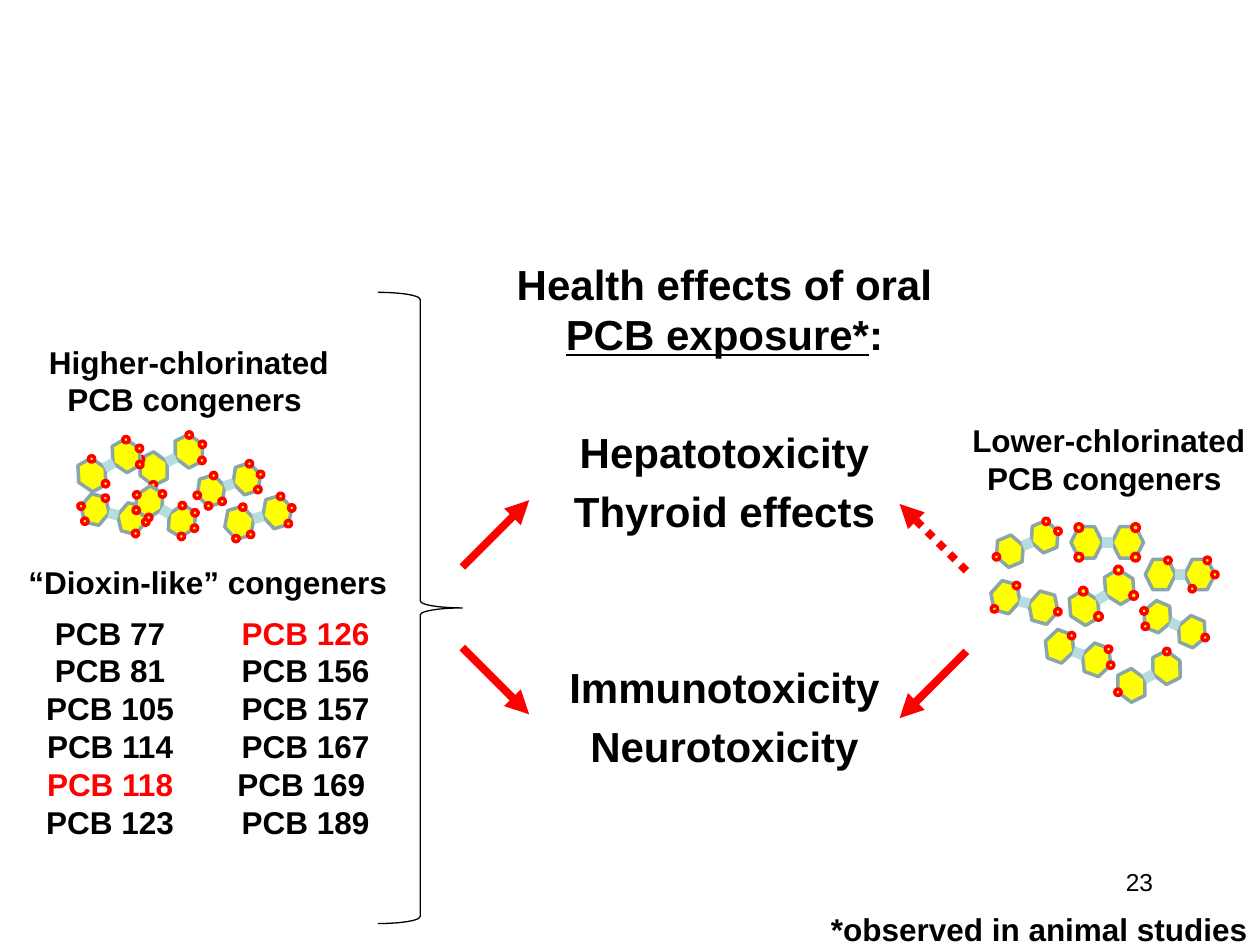
from math import cos, radians, sin

from lxml.etree import SubElement
from pptx import Presentation
from pptx.dml.color import RGBColor as Rgb
from pptx.enum.dml import MSO_LINE as Dash
from pptx.enum.shapes import MSO_CONNECTOR as Conn, MSO_SHAPE as Kind
from pptx.enum.text import MSO_ANCHOR as Anchor, MSO_AUTO_SIZE as Fit, PP_ALIGN as Align
from pptx.oxml.ns import qn
from pptx.util import Pt

PX = 9144
INK = {"black": "000000", "white": "FFFFFF", "red": "FF0000",
       "yellow": "FFFF00", "gray": "8AA6A8", "pale": "B6DCDF"}
CORNERS = [(0.5, 0), (0.25, 0.47), (-0.25, 0.47),
           (-0.5, 0), (-0.25, -0.47), (0.25, -0.47)]
LOWER = [
    (829, 501, 24, 20.1, "5", "50"),
    (909, 444, 24, 0, "5", "502"),
    (850, 418, 25, 0, "42", "51"),
    (848, 470, 25, -31, "51", "51"),
    (786, 462, 24, 15.5, "52", "0"),
    (907, 478, 23, 23.5, "32", "0"),
    (790, 426, 23, -22.6, "3", "50"),
    (886, 532, 24, -26.9, "3", "5"),
]
HIGHER = [
    (110, 360, 24, -26.6, "42", "501"),
    (61, 365, 24, -29.3, "51", "501"),
    (178, 403, 24, -15.9, "512", "501"),
    (64, 393, 23, 13.7, "532", "501"),
    (156, 378, 23, -18.3, "5123", "501"),
    (107, 387, 23, 30.1, "5123", "5014"),
]
DIOXIN = [77, 81, 105, 114, 118, 123, 126, 156, 157, 167, 169, 189]
EFFECTS = [("Hepatotoxicity", 38.5), ("Thyroid effects", 4.8),
           ("Immunotoxicity", 72), ("Neurotoxicity", 4.8)]


def emu(*vals):
    return [round(v * PX) for v in vals]


def rgb(name):
    return Rgb.from_string(INK[name])


def write(para, text, size=18, ink="black", bold=True, under=None,
          align=Align.CENTER, before=0):
    para.alignment = align
    if before:
        para.space_before = Pt(before)
    run = para.add_run()
    run.text = text
    font = run.font
    font.name, font.size, font.bold, font.underline = "Arial", Pt(size), bold, under
    font.color.rgb = rgb(ink)


class Page:
    """Draws styled elements on the current slide."""

    def __init__(self, deck):
        self.slide = deck.slides.add_slide(deck.slide_layouts[6])
        self.root = self.slide.shapes

    def box(self, x, y, w, h, grow=False, cols=1):
        frame = self.root.add_textbox(*emu(x, y, w, h)).text_frame
        frame.word_wrap = True
        frame.auto_size = Fit.SHAPE_TO_FIT_TEXT if grow else Fit.NONE
        if cols > 1:
            frame._txBody.bodyPr.set("numCol", str(cols))
        return frame

    def label(self, x, y, w, h, text, grow=False, **fmt):
        write(self.box(x, y, w, h, grow).paragraphs[0], text, **fmt)

    def shape(self, kind, x, y, w, h, fill=None, line=None, width=2, turn=0, home=None):
        item = (home or self.root).add_shape(kind, *emu(x, y, w, h))
        item.shadow.inherit = False
        item.rotation = turn % 360
        if fill:
            item.fill.solid()
            item.fill.fore_color.rgb = rgb(fill)
        else:
            item.fill.background()
        if line:
            item.line.color.rgb = rgb(line)
            item.line.width = Pt(width)
        else:
            item.line.fill.background()
        return item

    def line(self, start, end, ink, width, arrow=False, dash=None, home=None):
        item = (home or self.root).add_connector(Conn.STRAIGHT, *emu(*start, *end))
        item.line.color.rgb = rgb(ink)
        item.line.width = Pt(width)
        if dash:
            item.line.dash_style = dash
        if arrow:
            SubElement(item.line._get_or_add_ln(), qn("a:tailEnd"), type="triangle")
        SubElement(item._element.spPr, qn("a:effectLst"))

    def pcb(self, home, x, y, size, turn, *sites):
        c, s = cos(radians(turn)), sin(radians(turn))

        def spot(u, v=0):
            return (x + size * (0.5 + u * c - v * s),
                    y + size * (0.5 + u * s + v * c))

        def disc(kind, mid, d, line):
            self.shape(kind, mid[0] - d / 2, mid[1] - d / 2, d, d,
                       "yellow", line, turn=turn, home=home)

        gap = 1.3
        for u in (0, gap):
            disc(Kind.HEXAGON, spot(u), size, "gray")
        self.line(spot(0.48), spot(gap - 0.48), "pale", 6, home=home)
        for u, marks in zip((0, gap), sites):
            for mark in marks:
                a, b = CORNERS[int(mark)]
                disc(Kind.OVAL, spot(u + a, b), 6 if size > 24 else 5, "red")


def main():
    deck = Presentation()
    deck.slide_width, deck.slide_height = emu(1000, 750)
    page = Page(deck)
    page.label(717, 683, 208, 50, "23", size=14, bold=False, align=Align.RIGHT)

    for cluster in (LOWER, HIGHER):
        home = page.root.add_group_shape().shapes
        for item in cluster:
            page.pcb(home, *item)

    page.label(0, 267, 300, 71, "Higher-chlorinated PCB congeners ", grow=True)

    body = page.box(375, 200, 400, 520)
    head = body.paragraphs[0]
    write(head, "Health effects of oral ", size=24)
    write(head, "PCB exposure*", size=24, under=True)
    write(head, ":", size=24)
    for text, before in EFFECTS:
        write(body.add_paragraph(), text, size=24, before=before)

    page.label(520, 717, 480, 30, "*observed in animal studies", align=Align.RIGHT)

    names = page.box(0, 482, 330, 192, grow=True, cols=2)
    for i, num in enumerate(DIOXIN):
        para = names.add_paragraph() if i else names.paragraphs[0]
        write(para, f"PCB {num}" + (" " if num == 169 else ""),
              ink="red" if num in (118, 126) else "black")

    title = page.shape(Kind.RECTANGLE, 0, 442, 330, 40, "white").text_frame
    title.word_wrap = True
    title.vertical_anchor = Anchor.TOP
    write(title.paragraphs[0], "“Dioxin-like” congeners")

    page.shape(Kind.RIGHT_BRACE, 300, 232, 67, 501, line="black", width=0.75)
    for x, y, dx, dy, dash in [(367, 450, 53, -53, None), (367, 514, 53, 53, None),
                               (767, 453, -53, -53, Dash.ROUND_DOT),
                               (767, 517, -53, 53, None)]:
        page.line((x, y), (x + dx, y + dy), "red", 4.5, arrow=True, dash=dash)

    page.label(760, 329, 240, 71, "Lower-chlorinated PCB congeners ", grow=True)
    deck.save("out.pptx")


if __name__ == "__main__":
    main()
